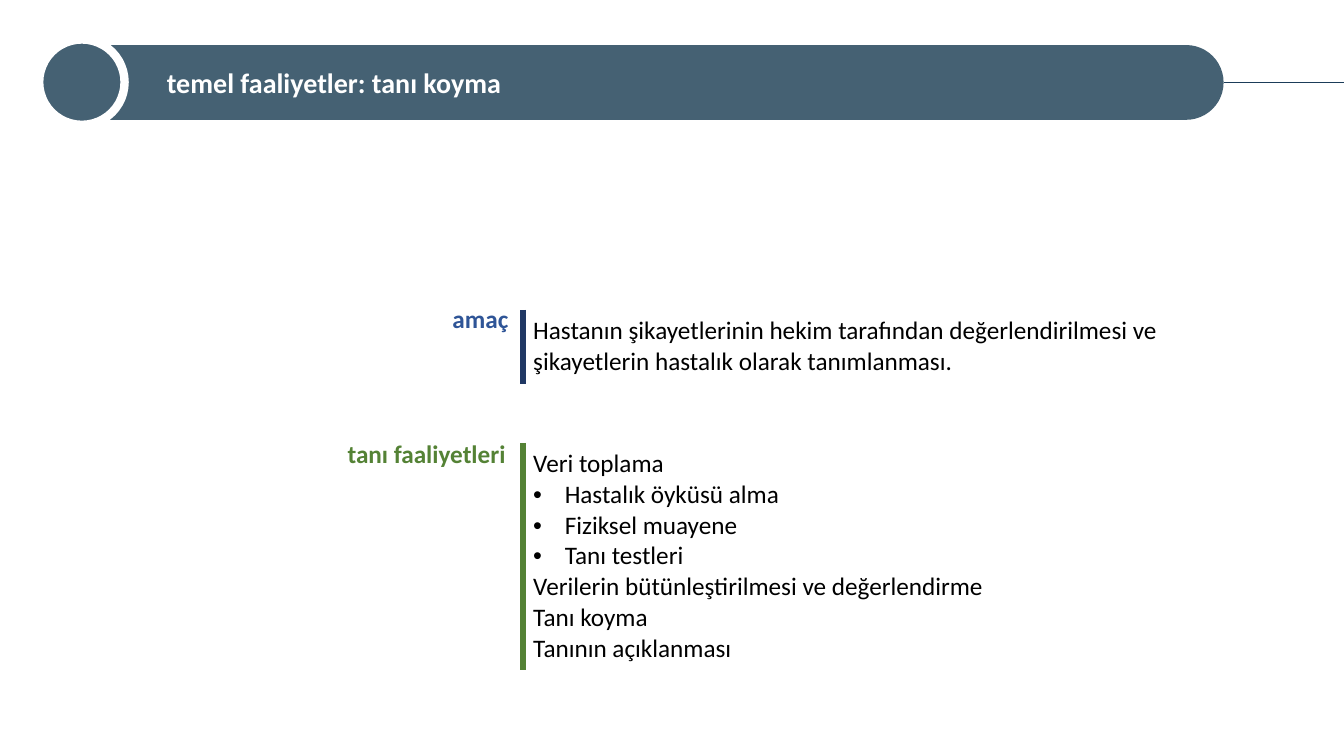
from lxml.etree import SubElement
from pptx import Presentation
from pptx.dml.color import RGBColor
from pptx.enum.shapes import MSO_CONNECTOR as Link, MSO_SHAPE as Shape
from pptx.enum.text import MSO_ANCHOR as Anchor, PP_ALIGN as Align
from pptx.oxml import parse_xml
from pptx.oxml.ns import nsdecls, qn
from pptx.util import Pt

SLATE = RGBColor(0x45, 0x61, 0x73)
NAVY = RGBColor(0x1B, 0x3C, 0x59)
DARK = RGBColor(0x20, 0x38, 0x64)
BLUE = RGBColor(0x2F, 0x55, 0x97)
GREEN = RGBColor(0x54, 0x82, 0x35)
WHITE = RGBColor(0xFF, 0xFF, 0xFF)
BLACK = RGBColor(0, 0, 0)


def write(frame, lines, size=18, color=BLACK, bold=False, align=Align.LEFT):
    """Fill a text frame; lines that start with a bullet become list items."""
    frame.word_wrap = True
    for i, line in enumerate(lines):
        para = frame.add_paragraph() if i else frame.paragraphs[0]
        para.alignment = align
        if line.startswith("•"):
            props = para._p.get_or_add_pPr()
            props.set("marL", str(Pt(22.5)))
            props.set("indent", str(-Pt(22.5)))
            SubElement(props, qn("a:buFont"), typeface="Arial")
            SubElement(props, qn("a:buChar"), char="•")
        run = para.add_run()
        run.text = line.lstrip("•")
        font = run.font
        font.name, font.size, font.bold = "Calibri", Pt(size), bold
        font.color.rgb = color


def edge(cell, side, color, width):
    cell._tc.get_or_add_tcPr().append(parse_xml(
        f'<a:ln{side} {nsdecls("a")} w="{Pt(width)}"><a:solidFill>'
        f'<a:srgbClr val="{color}"/></a:solidFill></a:ln{side}>'))


prs = Presentation()
prs.slide_width, prs.slide_height = Pt(960), Pt(540)
slide = prs.slides.add_slide(prs.slide_layouts[5])
shapes = slide.shapes

# Header
bar = shapes.add_shape(Shape.ROUNDED_RECTANGLE, Pt(28), Pt(32.2), Pt(846), Pt(53.4))
bar.adjustments[0] = 0.5
disc = shapes.add_shape(Shape.OVAL, Pt(28), Pt(28.2), Pt(61), Pt(61))
for shape in (bar, disc):
    shape.shadow.inherit = False
    shape.fill.solid()
    shape.fill.fore_color.rgb = SLATE
bar.line.fill.background()
disc.line.color.rgb = WHITE
disc.line.width = Pt(6)

title = shapes.title
title.left, title.top, title.width, title.height = Pt(112), Pt(32.2), Pt(740), Pt(53.4)
title.text_frame.vertical_anchor = Anchor.MIDDLE
write(title.text_frame, ["temel faaliyetler: tanı koyma"], size=20, color=WHITE, bold=True)
disc.element.addnext(title.element)

rule = shapes.add_connector(Link.STRAIGHT, Pt(874), Pt(58.9), Pt(960), Pt(58.9))
rule.begin_connect(bar, 3)
rule.line.color.rgb = NAVY
rule.line.width = Pt(0.5)
SubElement(rule.element.spPr, qn("a:effectLst"))

# Text panels: top, width, height, edges, lines
aim = ["Hastanın şikayetlerinin hekim tarafından değerlendirilmesi "
       "ve şikayetlerin hastalık olarak tanımlanması."]
steps = ["Veri toplama", "•Hastalık öyküsü alma", "•Fiziksel muayene", "•Tanı testleri",
         "Verilerin bütünleştirilmesi ve değerlendirme", "Tanı koyma", "Tanının açıklanması"]
panels = [
    (221.8, 533.5, 50.4, [("L", DARK, 4.5), ("R", WHITE, 1), ("B", WHITE, 3)], aim),
    (316.8, 543, 158.4, [("L", GREEN, 4.5)], steps),
]
for top, width, height, edges, lines in panels:
    table = shapes.add_table(1, 1, Pt(373.7), Pt(top), Pt(width), Pt(height)).table
    table.first_row = table.horz_banding = False
    cell = table.cell(0, 0)
    for side, color, weight in edges:
        edge(cell, side, color, weight)
    cell.fill.solid()
    cell.fill.fore_color.rgb = WHITE
    write(cell.text_frame, lines)

# Panel labels
labels = [
    ("tanı faaliyetleri", 241.2, 309.6, 128.2, GREEN, Align.LEFT),
    ("amaç", 259.2, 213.3, 111, BLUE, Align.RIGHT),
]
for text, left, top, width, color, align in labels:
    box = shapes.add_textbox(Pt(left), Pt(top), Pt(width), Pt(29))
    write(box.text_frame, [text], color=color, bold=True, align=align)

prs.save("out.pptx")
